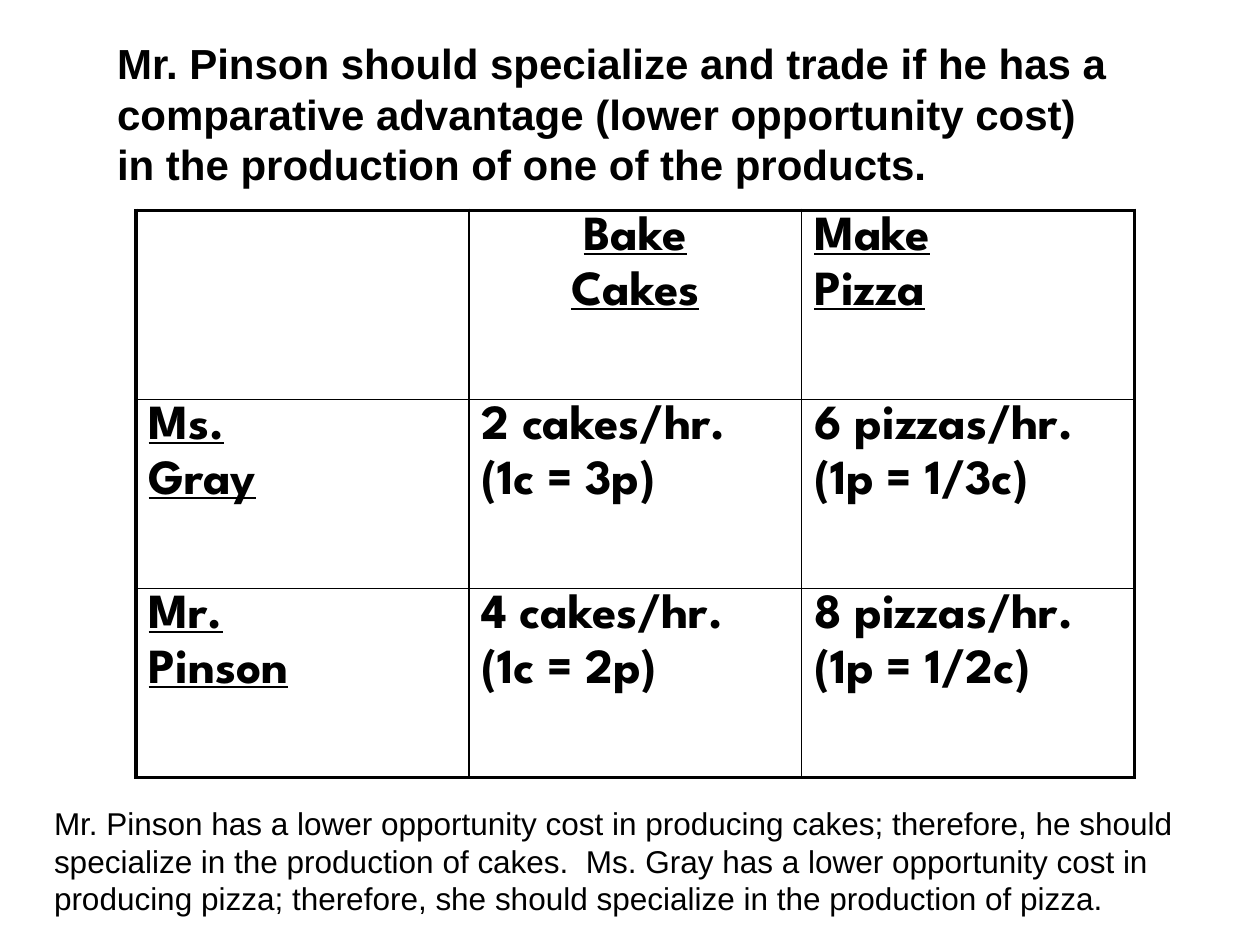
from dataclasses import dataclass

from lxml import etree
from pptx import Presentation
from pptx import util as u
from pptx.dml.color import RGBColor
from pptx.enum import text
from pptx.oxml import ns

COLORS = {"ink": "000000"}
THICK, THIN = u.Pt(2.25), u.Pt(1)
COLUMN_WIDTH, ROW_HEIGHT = u.Cm(6.71), u.Cm(3.81)


@dataclass
class Style:
    font: str
    size: float
    bold: bool = False
    underline: bool = False


@dataclass
class Passage:
    left: float
    top: float
    width: float
    height: float
    lines: list[str]
    style: Style


@dataclass
class Entry:
    lines: list[str]
    heading: bool = False
    centered: bool = False


PASSAGES = [
    Passage(2.11, 0.64, 20.62, 3.33, [
        "Mr. Pinson should specialize and trade if he has a",
        "comparative advantage (lower opportunity cost)",
        "in the production of one of the products.",
    ], Style("Arial", 24, bold=True)),
    Passage(0.84, 16.08, 23.5, 2.57, [
        "Mr. Pinson has a lower opportunity cost in producing cakes; therefore, "
        "he should specialize in the production of cakes.  Ms. Gray has a lower "
        "opportunity cost in producing pizza; therefore, she should specialize "
        "in the production of pizza.",
    ], Style("Arial", 18)),
]

OUTPUT = [
    [Entry([]), Entry(["Bake", "Cakes"], True, True), Entry(["Make", "Pizza"], True)],
    [Entry(["Ms.", "Gray"], True),
     Entry(["2 cakes/hr.", "(1c = 3p)"]), Entry(["6 pizzas/hr.", "(1p = 1/3c)"])],
    [Entry(["Mr.", "Pinson"], True),
     Entry(["4 cakes/hr.", "(1c = 2p)"]), Entry(["8 pizzas/hr.", "(1p = 1/2c)"])],
]


def write_lines(frame, lines: list[str], style: Style) -> None:
    frame.text = "\n".join(lines)
    for paragraph in frame.paragraphs:
        for run in paragraph.runs:
            run.font.name = style.font
            run.font.size = u.Pt(style.size)
            run.font.bold = style.bold
            run.font.underline = style.underline
            run.font.color.rgb = RGBColor.from_string(COLORS["ink"])


def add_passage(slide, passage: Passage) -> None:
    box = slide.shapes.add_textbox(u.Cm(passage.left), u.Cm(passage.top),
                                   u.Cm(passage.width), u.Cm(passage.height))
    box.text_frame.word_wrap = True
    box.text_frame.auto_size = text.MSO_AUTO_SIZE.SHAPE_TO_FIT_TEXT
    write_lines(box.text_frame, passage.lines, passage.style)


def add_border(cell, side: str, width: int) -> None:
    line = etree.SubElement(cell._tc.get_or_add_tcPr(), ns.qn(f"a:ln{side}"), w=str(width))
    fill = etree.SubElement(line, ns.qn("a:solidFill"))
    etree.SubElement(fill, ns.qn("a:srgbClr"), val=COLORS["ink"])


def fill_cell(cell, entry: Entry) -> None:
    write_lines(cell.text_frame, entry.lines,
                Style("League Spartan", 28, bold=True, underline=entry.heading))
    for index, paragraph in enumerate(cell.text_frame.paragraphs):
        if index:
            paragraph.space_before = u.Pt(5.6)
        if entry.centered:
            paragraph.alignment = text.PP_ALIGN.CENTER


def add_output_table(slide, left: float, top: float) -> None:
    row_count, column_count = len(OUTPUT), len(OUTPUT[0])
    table = slide.shapes.add_table(row_count, column_count, u.Cm(left), u.Cm(top),
                                   COLUMN_WIDTH * column_count,
                                   ROW_HEIGHT * row_count).table
    table.first_row = table.horz_banding = False
    for r, row in enumerate(OUTPUT):
        for c, entry in enumerate(row):
            cell = table.cell(r, c)
            # Thick frame around the table, thin rules inside
            outer_sides = {"L": c == 0, "R": c == column_count - 1,
                           "T": r == 0, "B": r == row_count - 1}
            for side, is_outer in outer_sides.items():
                add_border(cell, side, THICK if is_outer else THIN)
            cell.fill.background()
            fill_cell(cell, entry)


def main() -> None:
    deck = Presentation()
    deck.slide_width, deck.slide_height = u.Cm(25.4), u.Cm(19.05)
    slide = deck.slides.add_slide(deck.slide_layouts[6])

    # Hourly output and opportunity costs
    add_output_table(slide, 2.74, 4.24)

    # Claim above the table, conclusion below it
    for passage in PASSAGES:
        add_passage(slide, passage)

    deck.save("out.pptx")


if __name__ == "__main__":
    main()
